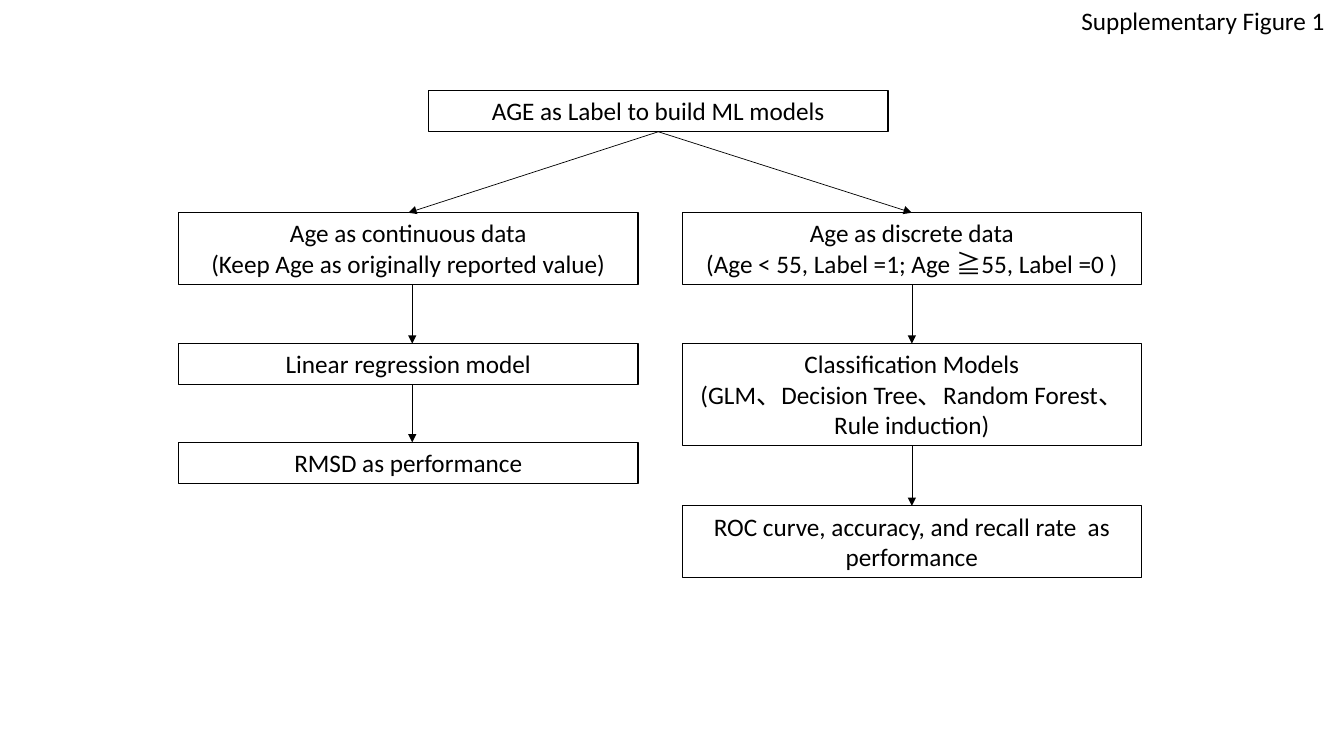
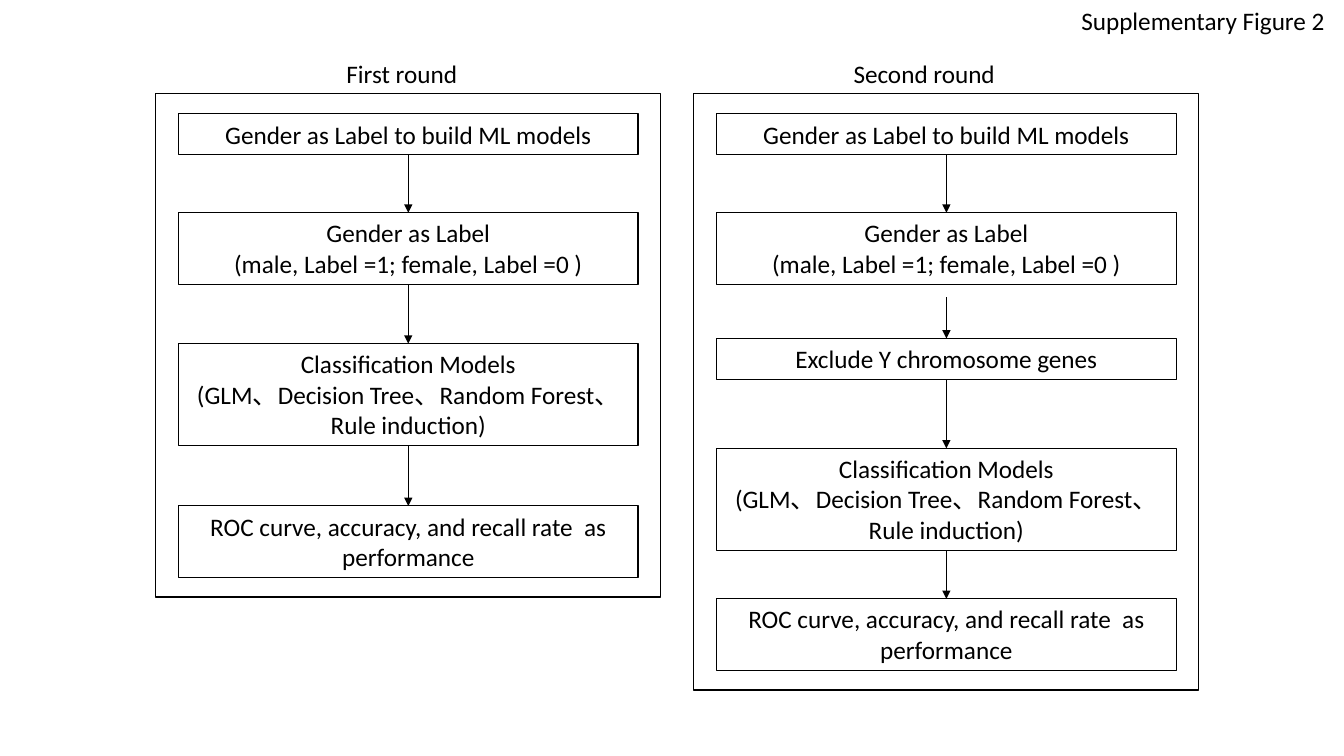
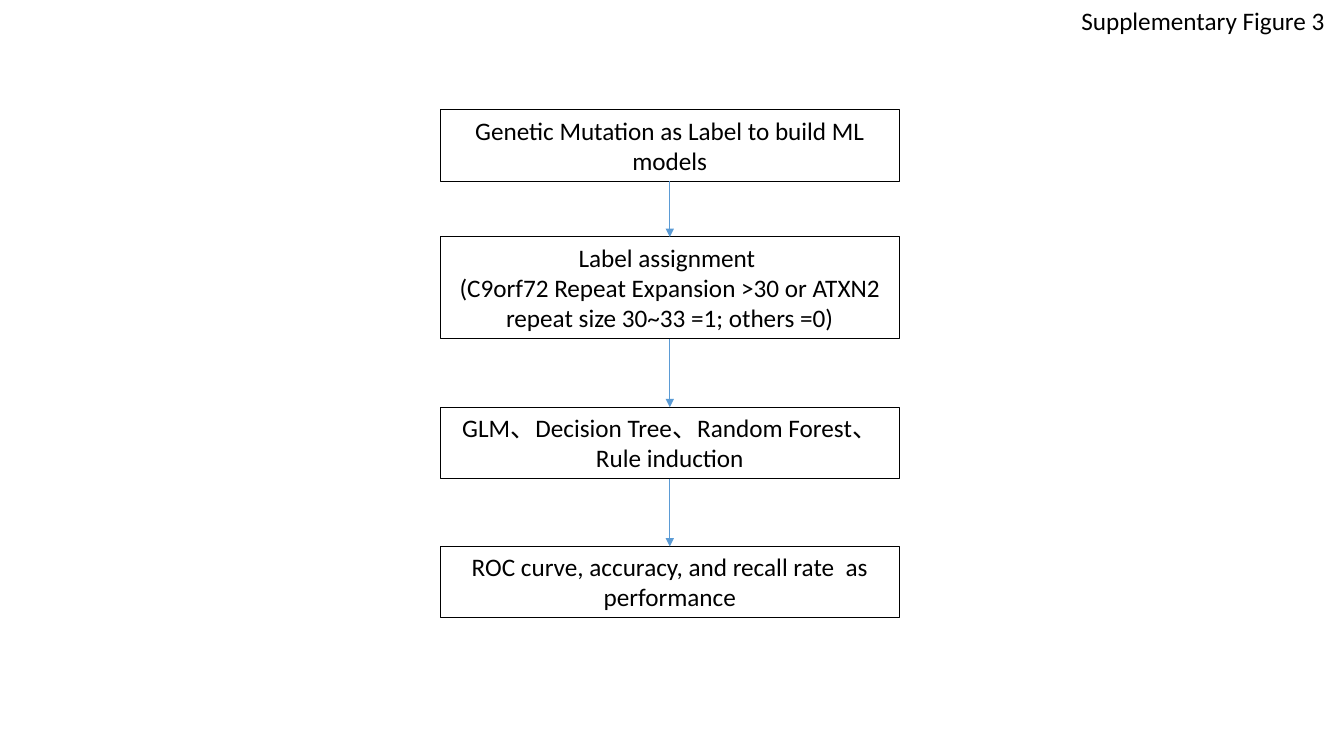
from dataclasses import dataclass
from itertools import groupby, pairwise

from lxml import etree
from pptx import Presentation
from pptx.dml.color import RGBColor
from pptx.enum.shapes import MSO_CONNECTOR, MSO_SHAPE
from pptx.enum.text import MSO_ANCHOR, MSO_AUTO_SIZE, PP_ALIGN
from pptx.oxml.ns import qn
from pptx.shapes.autoshape import Shape
from pptx.slide import Slide
from pptx.text.text import TextFrame
from pptx.util import Cm, Pt

RECTANGLE = MSO_SHAPE.RECTANGLE
STRAIGHT = MSO_CONNECTOR.STRAIGHT
TOP = MSO_ANCHOR.TOP
GROW = MSO_AUTO_SIZE.SHAPE_TO_FIT_TEXT
LEFT, CENTER = PP_ALIGN.LEFT, PP_ALIGN.CENTER

COLORS = {"ink": "000000", "accent": "5B9BD5"}
FONT, SYMBOL_FONT = "Calibri", "Noto Sans CJK SC"
SYMBOL = "≧"

# All lengths below are in centimetres.
PAGE_WIDTH, PAGE_HEIGHT = 33.87, 19.05
BOX_WIDTH = 11.58
ONE_ROW, EXTRA_ROW = 1.03, 0.77
TITLE_LEFT, TITLE_WIDTH = 27.0, 6.87
CAPTION_TOP = 1.35
FRAME_TOP, FRAME_WIDTH = 2.36, 12.73
FRAME_SIDE, FRAME_BOTTOM = 0.58, 0.5


@dataclass(frozen=True)
class Step:
    top: float
    rows: int
    paragraphs: tuple[str, ...]
    gap_below: float = 0

    @property
    def bottom(self) -> float:
        return self.top + ONE_ROW + EXTRA_ROW * (self.rows - 1)


@dataclass(frozen=True)
class Flow:
    left: float
    steps: tuple[Step, ...]
    arrow_shift: float = 0
    arrow_color: str = "ink"

    @property
    def center(self) -> float:
        return self.left + BOX_WIDTH / 2


@dataclass(frozen=True)
class Round:
    caption: str
    caption_left: float
    caption_width: float
    flow: Flow


METHODS = "GLM、Decision Tree、Random Forest、Rule induction"
CLASSIFICATION = ("Classification Models", f"({METHODS})")
PERFORMANCE = ("ROC curve, accuracy, and recall rate  as performance",)

AGE_ROOT = Flow(10.8, (Step(2.29, 1, ("AGE as Label to build ML models",)),))
AGE_BRANCHES = (
    Flow(4.5, (
        Step(5.36, 2, ("Age as continuous data",
                       "(Keep Age as originally reported value)")),
        Step(8.66, 1, ("Linear regression model",)),
        Step(11.15, 1, ("RMSD as performance",)),
    ), arrow_shift=0.1),
    Flow(17.19, (
        Step(5.36, 2, ("Age as discrete data",
                       "(Age < 55, Label =1; Age ≧55, Label =0 )")),
        Step(8.66, 3, CLASSIFICATION),
        Step(12.75, 2, PERFORMANCE),
    )),
)

GENDER_START = Step(2.87, 1, ("Gender as Label to build ML models",))
GENDER_LABEL = ("Gender as Label", "(male, Label =1; female, Label =0 )")
GENDER_ROUNDS = (
    Round("First round", 8.48, 3.56, Flow(4.5, (
        GENDER_START,
        Step(5.36, 2, GENDER_LABEL),
        Step(8.66, 3, CLASSIFICATION),
        Step(12.75, 2, PERFORMANCE),
    ))),
    Round("Second round", 21.26, 4.2, Flow(18.06, (
        GENDER_START,
        Step(5.36, 2, GENDER_LABEL, gap_below=0.33),
        Step(8.53, 1, ("Exclude Y chromosome genes",)),
        Step(11.3, 3, CLASSIFICATION),
        Step(15.09, 2, PERFORMANCE),
    ))),
)

MUTATION_FLOW = Flow(11.09, (
    Step(2.77, 2, ("Genetic Mutation as Label to build ML models",)),
    Step(5.97, 3, ("Label assignment ",
                   "(C9orf72 Repeat Expansion >30 or ATXN2 repeat size 30~33 =1; others =0)")),
    Step(10.26, 2, (METHODS,)),
    Step(13.77, 2, PERFORMANCE),
), arrow_color="accent")


def rgb(name: str) -> RGBColor:
    return RGBColor.from_string(COLORS[name])


def write_text(frame: TextFrame, paragraphs: tuple[str, ...], align: PP_ALIGN) -> None:
    frame.word_wrap = True
    frame.auto_size = GROW
    frame.vertical_anchor = TOP
    for index, text in enumerate(paragraphs):
        para = frame.add_paragraph() if index else frame.paragraphs[0]
        para.alignment = align
        for is_symbol, letters in groupby(text, lambda letter: letter == SYMBOL):
            span = para.add_run()
            span.text = "".join(letters)
            span.font.size = Pt(18)
            span.font.color.rgb = rgb("ink")
            span.font.name = SYMBOL_FONT if is_symbol else FONT
            east_asian = etree.SubElement(span.font._element, qn("a:ea"))
            east_asian.set("typeface", SYMBOL_FONT)


def add_label(page: Slide, text: str, left: float, top: float, width: float) -> None:
    label = page.shapes.add_textbox(Cm(left), Cm(top), Cm(width), Cm(ONE_ROW))
    write_text(label.text_frame, (text,), LEFT)


def add_outline(page: Slide, left: float, top: float, width: float, height: float,
                weight: float) -> Shape:
    """Draw an unfilled rectangle."""
    box = page.shapes.add_shape(RECTANGLE, Cm(left), Cm(top), Cm(width), Cm(height))
    box.shadow.inherit = False
    box.fill.background()
    box.line.color.rgb = rgb("ink")
    box.line.width = Pt(weight)
    return box


def add_arrow(page: Slide, start: tuple[float, float], end: tuple[float, float],
              color: str = "ink") -> None:
    arrow = page.shapes.add_connector(STRAIGHT, *map(Cm, start + end))
    arrow.line.color.rgb = rgb(color)
    arrow.line.width = Pt(0.5)
    head = etree.SubElement(arrow.line._get_or_add_ln(), qn("a:tailEnd"))
    head.set("type", "triangle")
    etree.SubElement(arrow._element.spPr, qn("a:effectLst"))


def add_flow(page: Slide, flow: Flow) -> None:
    """Draw the steps and an arrow between each two neighbours."""
    for step in flow.steps:
        box = add_outline(page, flow.left, step.top, BOX_WIDTH, step.bottom - step.top, 0.75)
        write_text(box.text_frame, step.paragraphs, CENTER)
    axis = flow.center + flow.arrow_shift
    for upper, lower in pairwise(flow.steps):
        add_arrow(page, (axis, upper.bottom + upper.gap_below), (axis, lower.top),
                  flow.arrow_color)


def add_age_page(page: Slide) -> None:
    add_flow(page, AGE_ROOT)
    for branch in AGE_BRANCHES:
        add_flow(page, branch)
        add_arrow(page, (AGE_ROOT.center, AGE_ROOT.steps[-1].bottom),
                  (branch.center, branch.steps[0].top))


def add_gender_page(page: Slide) -> None:
    for item in GENDER_ROUNDS:
        add_label(page, item.caption, item.caption_left, CAPTION_TOP, item.caption_width)
        add_flow(page, item.flow)
        frame_height = item.flow.steps[-1].bottom + FRAME_BOTTOM - FRAME_TOP
        add_outline(page, item.flow.left - FRAME_SIDE, FRAME_TOP, FRAME_WIDTH, frame_height, 1)


def add_mutation_page(page: Slide) -> None:
    add_flow(page, MUTATION_FLOW)


def main() -> None:
    deck = Presentation()
    deck.slide_width, deck.slide_height = Cm(PAGE_WIDTH), Cm(PAGE_HEIGHT)
    blank = deck.slide_layouts[6]
    builders = (add_age_page, add_gender_page, add_mutation_page)
    for number, build in enumerate(builders, start=1):
        page = deck.slides.add_slide(blank)
        add_label(page, f"Supplementary Figure {number}", TITLE_LEFT, 0, TITLE_WIDTH)
        build(page)
    deck.save("out.pptx")


if __name__ == "__main__":
    main()
